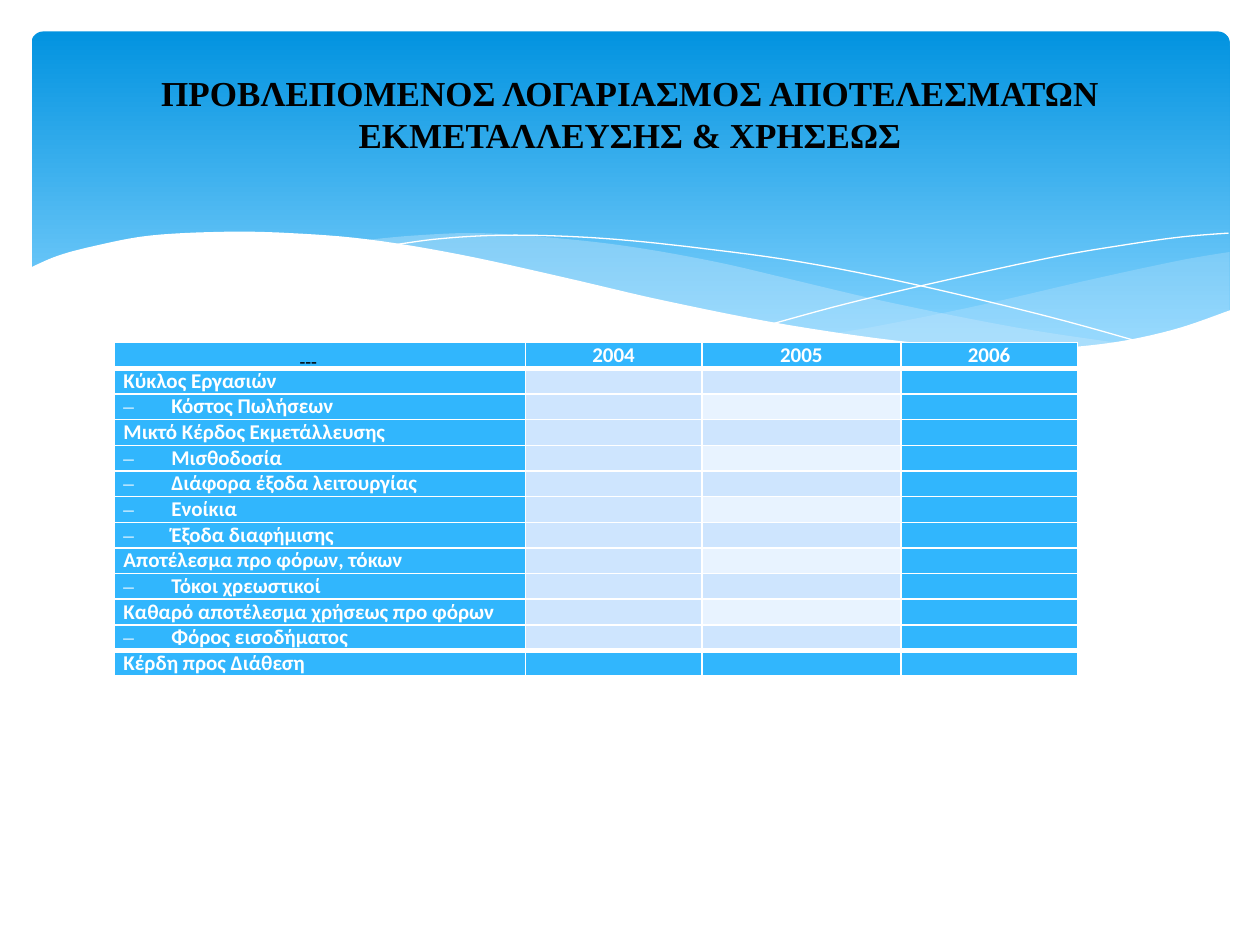
from lxml import etree
from pptx import Presentation
from pptx.dml.color import RGBColor
from pptx.enum.shapes import MSO_SHAPE
from pptx.enum.text import MSO_ANCHOR, PP_ALIGN
from pptx.oxml.ns import qn
from pptx.util import Inches, Pt

ROUNDED = MSO_SHAPE.ROUNDED_RECTANGLE
CENTER, JUSTIFY = PP_ALIGN.CENTER, PP_ALIGN.JUSTIFY
TOP, MIDDLE = MSO_ANCHOR.TOP, MSO_ANCHOR.MIDDLE

WHITE = RGBColor(0xFF, 0xFF, 0xFF)
BLACK = RGBColor(0, 0, 0)
DEEP_BLUE = RGBColor(0x02, 0x93, 0xE0)
LIGHT_BLUE = RGBColor(0x83, 0xD3, 0xFE)
MIST = RGBColor(0xC6, 0xE7, 0xFC)
TABLE_BLUE = RGBColor(0x31, 0xB6, 0xFD)
BAND_DARK = RGBColor(0xCE, 0xE5, 0xFE)
BAND_LIGHT = RGBColor(0xE8, 0xF3, 0xFF)

# Knots of the curves, in inches on the slide
RIGHT_MIST_TOP = [(9.76, 2), (9.35, 2.07), (8.61, 2.23), (7.79, 2.42), (7.06, 2.57), (6.61, 2.65)]
RIGHT_MIST_BOTTOM = [(6.61, 2.65), (7.19, 2.72), (7.69, 2.77), (8.14, 2.78), (8.63, 2.75),
                     (9.05, 2.69), (9.42, 2.59), (9.76, 2.47)]
LEFT_MIST_TOP = [(8.93, 2.73), (8.07, 2.6), (7.06, 2.4), (6.29, 2.22), (5.69, 2.08), (5.02, 1.96),
                 (4.42, 1.89), (3.8, 1.85), (3.28, 1.87), (2.86, 1.91)]
LEFT_MIST_BOTTOM = [(2.86, 1.91), (3.62, 2.03), (4.49, 2.22), (5.3, 2.4), (6.01, 2.55), (6.65, 2.66),
                    (7.22, 2.74), (7.73, 2.77), (8.18, 2.78), (8.57, 2.77), (8.93, 2.73)]
FALLING_LINE = [(3.09, 1.95), (3.44, 1.9), (3.87, 1.87), (4.33, 1.87), (4.89, 1.9), (5.56, 1.97),
                (6.36, 2.08), (7.27, 2.26), (8.31, 2.51), (9.07, 2.72)]
RISING_LINE = [(6.13, 2.57), (6.72, 2.41), (7.48, 2.23), (8.36, 2.04), (8.95, 1.94), (9.38, 1.88),
               (9.75, 1.85)]
WHITE_WAVE = [(9.77, 2.46), (9.3, 2.62), (8.75, 2.73), (8.09, 2.77), (7.26, 2.72), (6.26, 2.58),
              (5.29, 2.39), (4.47, 2.2), (3.65, 2.02), (2.92, 1.9), (2.3, 1.85), (1.77, 1.84),
              (1.19, 1.87), (0.76, 1.95), (0.46, 2.03), (0.23, 2.13)]

YEARS = ["2004", "2005", "2006"]
# Row label, and whether it is a deduction marked with a dash
ACCOUNT_ROWS = [
    ("Κύκλος Εργασιών", False),
    ("Κόστος Πωλήσεων", True),
    ("Μικτό Κέρδος Εκμετάλλευσης", False),
    ("Μισθοδοσία", True),
    ("Διάφορα έξοδα λειτουργίας", True),
    ("Ενοίκια", True),
    ("Έξοδα διαφήμισης", True),
    ("Αποτέλεσμα προ φόρων, τόκων", False),
    ("Τόκοι χρεωστικοί", True),
    ("Καθαρό αποτέλεσμα χρήσεως προ φόρων", False),
    ("Φόρος εισοδήματος", True),
    ("Κέρδη προς Διάθεση", False),
]
COLUMN_WIDTHS = [3.26, 1.4, 1.58, 1.4]


def smooth_curve(knots, steps=6):
    """Return points of a Catmull-Rom curve through the knots."""
    padded = [knots[0], *knots, knots[-1]]
    points = [knots[0]]
    for a, b, c, d in zip(padded, padded[1:], padded[2:], padded[3:]):
        for step in range(1, steps + 1):
            t = step / steps
            points.append(tuple(
                (2 * q + (r - p) * t + (2 * p - 5 * q + 4 * r - s) * t ** 2
                 + (3 * q - p - 3 * r + s) * t ** 3) / 2
                for p, q, r, s in zip(a, b, c, d)))
    return points


def add_outline(page, points, fill=None, alpha=None):
    """Draw a filled closed outline, or a white hairline when there is no fill."""
    corners = [(Inches(x), Inches(y)) for x, y in points]
    builder = page.shapes.build_freeform(*corners[0])
    builder.add_line_segments(corners[1:], close=fill is not None)
    shape = builder.convert_to_shape()
    shape.shadow.inherit = False
    if fill is None:
        shape.fill.background()
        shape.line.color.rgb = WHITE
        shape.line.width = Pt(0)
        return
    shape.line.fill.background()
    shape.fill.solid()
    shape.fill.fore_color.rgb = fill
    if alpha is not None:
        color = shape._element.spPr.find(".//" + qn("a:srgbClr"))
        etree.SubElement(color, qn("a:alpha"), val=str(alpha * 1000))


def add_wave_banner(page, left, top, width, height):
    banner = page.shapes.add_shape(ROUNDED, left, top, width, height)
    banner.adjustments[0] = 0.034
    banner.shadow.inherit = False
    banner.line.fill.background()
    banner.fill.gradient()
    banner.fill.gradient_angle = 270
    for stop, color, position in zip(banner.fill.gradient_stops, (DEEP_BLUE, LIGHT_BLUE), (0, 0.9)):
        stop.color.rgb = color
        stop.position = position

    add_outline(page, smooth_curve(RIGHT_MIST_TOP) + smooth_curve(RIGHT_MIST_BOTTOM), MIST, 29)
    add_outline(page, smooth_curve(LEFT_MIST_TOP) + smooth_curve(LEFT_MIST_BOTTOM), MIST, 40)
    add_outline(page, smooth_curve(FALLING_LINE))
    add_outline(page, smooth_curve(RISING_LINE))
    add_outline(page, smooth_curve(WHITE_WAVE) + [(0.23, 3.29), (9.77, 3.29)], WHITE)


def format_run(span, font, size, color):
    span.font.name = font
    span.font.size = Pt(size)
    span.font.bold = True
    span.font.color.rgb = color


def add_text(page, left, top, width, height, text, size, anchor, wrap, margin_top, margin_bottom):
    box = page.shapes.add_textbox(left, top, width, height)
    frame = box.text_frame
    frame.word_wrap = wrap
    frame.vertical_anchor = anchor
    frame.margin_top, frame.margin_bottom = margin_top, margin_bottom
    frame.text = text
    format_run(frame.paragraphs[0].runs[0], "Times New Roman", size, BLACK)
    return frame.paragraphs[0]


def set_borders(cell, top, bottom):
    properties = cell._tc.get_or_add_tcPr()
    for side, width in (("L", 1), ("R", 1), ("T", top), ("B", bottom)):
        line = etree.SubElement(properties, qn("a:ln" + side), w=str(Pt(width)))
        solid = etree.SubElement(line, qn("a:solidFill"))
        etree.SubElement(solid, qn("a:srgbClr"), val=str(WHITE))


def add_dash_bullet(para):
    properties = para._p.get_or_add_pPr()
    properties.set("marL", str(Inches(0.38)))
    properties.set("indent", str(Inches(-0.38)))
    etree.SubElement(properties, qn("a:buFont"), typeface="Times New Roman")
    etree.SubElement(properties, qn("a:buChar"), char="–")


def cell_color(row, column, last_row):
    if row in (0, last_row) or column in (0, 3):
        return TABLE_BLUE
    return BAND_LIGHT if column == 2 and row % 2 == 0 else BAND_DARK


def add_account_table(page, left, top, width, height):
    last_row = len(ACCOUNT_ROWS)
    table = page.shapes.add_table(last_row + 1, len(COLUMN_WIDTHS), left, top, width, height).table
    for column, column_width in zip(table.columns, COLUMN_WIDTHS):
        column.width = Inches(column_width)
    labels = [("", False), *ACCOUNT_ROWS]
    for row, (label, is_deduction) in enumerate(labels):
        for column, text in enumerate([label, *(YEARS if row == 0 else [""] * 3)]):
            cell = table.cell(row, column)
            cell.margin_left = cell.margin_right = Inches(0.07)
            cell.margin_top = cell.margin_bottom = 0
            set_borders(cell, 3 if row in (1, last_row) else 1, 3 if row in (0, last_row - 1) else 1)
            cell.fill.solid()
            cell.fill.fore_color.rgb = cell_color(row, column, last_row)
            para = cell.text_frame.paragraphs[0]
            if not text:
                etree.SubElement(para._p, qn("a:endParaRPr"), sz="1200")
                continue
            para.text = text
            format_run(para.runs[0], "Calibri", 12, WHITE)
            if row == 0:
                para.alignment = CENTER
            elif is_deduction:
                para.alignment = JUSTIFY
                add_dash_bullet(para)


def main():
    deck = Presentation()
    deck.slide_width, deck.slide_height = Inches(10), Inches(7.5)
    page = deck.slides.add_slide(deck.slide_layouts[6])
    add_wave_banner(page, Inches(0.25), Inches(0.25), Inches(9.51), Inches(2.7))
    add_account_table(page, Inches(0.91), Inches(2.72), Inches(7.64), Inches(2.6))
    title = add_text(page, Inches(0.5), Inches(0.37), Inches(9), Inches(1.37),
                     "ΠΡΟΒΛΕΠΟΜΕΝΟΣ ΛΟΓΑΡΙΑΣΜΟΣ ΑΠΟΤΕΛΕΣΜΑΤΩΝ ΕΚΜΕΤΑΛΛΕΥΣΗΣ & ΧΡΗΣΕΩΣ",
                     20, MIDDLE, True, Inches(0.05), Inches(0.36))
    title.alignment = CENTER
    add_text(page, Inches(2.28), Inches(2.63), Inches(0.34), Inches(0.68),
             "---", 10, TOP, False, Inches(0.17), Inches(0.04))
    deck.save("out.pptx")


if __name__ == "__main__":
    main()
